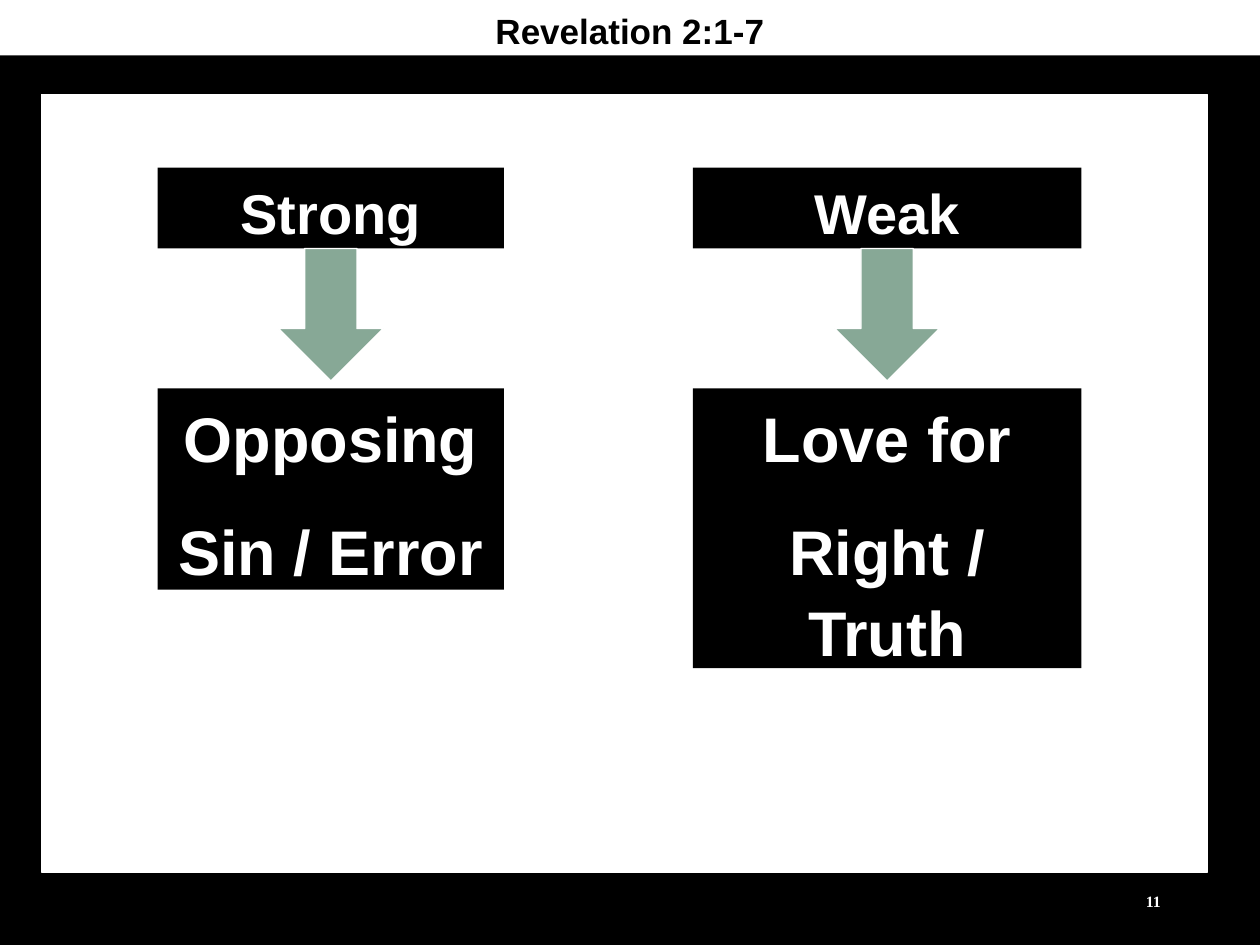
from pptx import Presentation
from pptx.dml.color import RGBColor
from pptx.enum import shapes, text
from pptx.util import Cm, Pt

BLACK = RGBColor(0x00, 0x00, 0x00)
WHITE = RGBColor(0xFF, 0xFF, 0xFF)
GREEN = RGBColor(0x87, 0xA8, 0x96)

SHAPE = shapes.MSO_SHAPE
ALIGN = text.PP_ALIGN
ANCHOR = text.MSO_ANCHOR

BOX_TOP, BOX_H = 3.38, 1.63
RESULT_TOP = 7.83
ARROW_W, ARROW_H = 2.11, 2.67

# left, width, heading, result lines, result height
COLUMNS = [
    (3.18, 6.98, "Strong", ["Opposing", "Sin / Error"], 4.06),
    (13.97, 7.83, "Weak", ["Love for", "Right / Truth"], 5.64),
]


def add_block(slide, kind, left, top, width, height, fill, line=None):
    sp = slide.shapes.add_shape(kind, Cm(left), Cm(top), Cm(width), Cm(height))
    sp.shadow.inherit = False
    sp.fill.solid()
    sp.fill.fore_color.rgb = fill
    if line is None:
        sp.line.fill.background()
    else:
        sp.line.color.rgb = line
        sp.line.width = Pt(0.75)
    return sp


def write(sp, lines, size, color=WHITE, font="Arial", align=ALIGN.CENTER,
          anchor=ANCHOR.TOP, spacing=1.07):
    """Fill a shape with bold paragraphs, half a line of space between them."""
    tf = sp.text_frame
    tf.word_wrap = True
    tf.vertical_anchor = anchor
    for i, line in enumerate(lines):
        p = tf.paragraphs[0] if i == 0 else tf.add_paragraph()
        p.alignment = align
        p.line_spacing = spacing
        if i:
            p.space_before = Pt(size / 2)
        r = p.add_run()
        r.text = line
        r.font.name = font
        r.font.size = Pt(size)
        r.font.bold = True
        r.font.color.rgb = color


def add_column(slide, left, width, heading, result, result_h):
    """Heading box, result box and the arrow that leads from one to the other."""
    sp = add_block(slide, SHAPE.RECTANGLE, left, BOX_TOP, width, BOX_H, BLACK)
    write(sp, [heading], 32)
    sp = add_block(slide, SHAPE.RECTANGLE, left, RESULT_TOP, width, result_h, BLACK)
    write(sp, result, 36)
    add_block(slide, SHAPE.DOWN_ARROW, left + (width - ARROW_W) / 2,
              BOX_TOP + BOX_H, ARROW_W, ARROW_H, GREEN, line=WHITE)


def add_page_number(slide, number):
    sp = slide.shapes.add_textbox(Cm(17.93), Cm(17.65), Cm(5.72), Cm(1.02))
    write(sp, [number], 9, font="Times New Roman", align=ALIGN.RIGHT,
          anchor=ANCHOR.MIDDLE, spacing=1.0)


def main():
    prs = Presentation()
    prs.slide_width, prs.slide_height = Cm(25.4), Cm(19.05)
    slide = prs.slides.add_slide(prs.slide_layouts[6])
    slide.background.fill.solid()
    slide.background.fill.fore_color.rgb = BLACK

    add_block(slide, SHAPE.FLOWCHART_PROCESS, 0.84, 1.91, 23.5, 15.67, WHITE, line=WHITE)
    for column in COLUMNS:
        add_column(slide, *column)
    title = add_block(slide, SHAPE.RECTANGLE, 0, 0, 25.4, 1.12, WHITE)
    write(title, ["Revelation 2:1-7"], 20, color=BLACK)
    add_page_number(slide, "11")
    prs.save("out.pptx")


if __name__ == "__main__":
    main()
